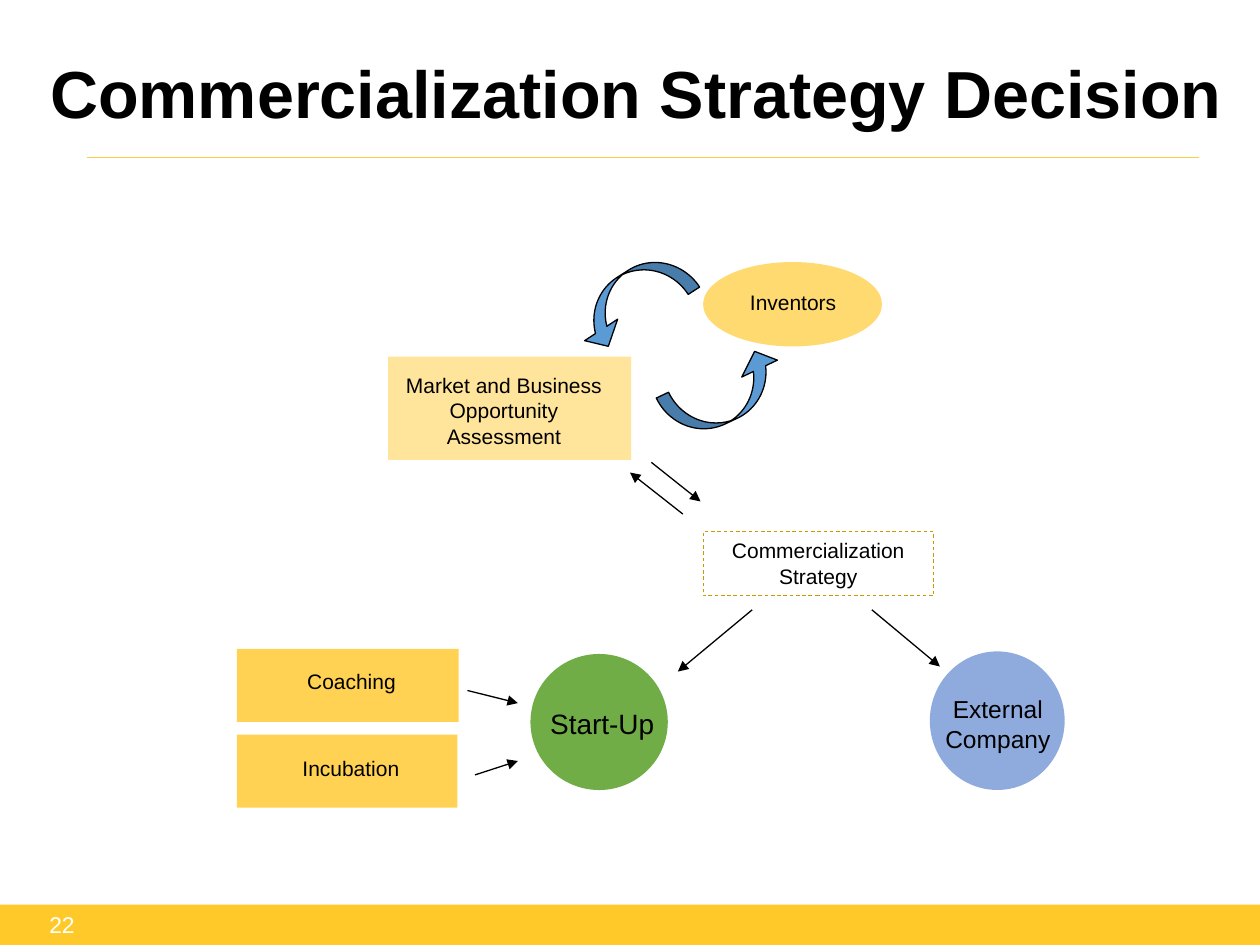
from lxml.etree import SubElement
from pptx import Presentation
from pptx.dml.color import RGBColor
from pptx.enum.dml import MSO_LINE
from pptx.enum.shapes import MSO_CONNECTOR, MSO_SHAPE as Kind
from pptx.enum.text import MSO_ANCHOR, PP_ALIGN as Align
from pptx.oxml.ns import qn
from pptx.util import Inches, Pt

hue = RGBColor.from_string
UNIT = Inches(0.1)  # the slide is a grid of 100 columns by 75 rows

deck = Presentation()
deck.slide_width, deck.slide_height = 100 * UNIT, 75 * UNIT
slide = deck.slides.add_slide(deck.slide_layouts[6])
shapes = slide.shapes


def draw(kind, box, fill=None):
    shape = shapes.add_shape(kind, *[int(v * UNIT) for v in box])
    shape.shadow.inherit = False
    shape.line.fill.background()
    if fill:
        shape.fill.solid()
        shape.fill.fore_color.rgb = hue(fill)
    else:
        shape.fill.background()
    return shape


def write(text, box, size, color="000000", align=Align.CENTER, bold=False):
    area = shapes.add_textbox(*[int(v * UNIT) for v in box])
    frame = area.text_frame
    frame.word_wrap = True
    para = frame.paragraphs[0]
    para.text = text
    para.alignment = align
    font = para.font
    font.name, font.size, font.bold = "Arial", Pt(size), bold
    font.color.rgb = hue(color)
    return area


# Footer band with page number
draw(Kind.RECTANGLE, (0, 71.8, 100, 3.2), "FFCA29")
page = write("22", (0, 71.8, 6.9, 3.1), 13, "FFFFFF", Align.RIGHT)
page.text_frame.vertical_anchor = MSO_ANCHOR.MIDDLE

# Title
write("Commercialization Strategy Decision", (3, 3.6, 97.4, 7.4), 38,
      align=Align.LEFT, bold=True)

# Nodes: kind, box, fill, text, text box, size
nodes = [
    (Kind.RECTANGLE, (30.8, 28.3, 19.3, 8.2), "FFE59B",
     "Market and Business Opportunity Assessment", (30, 29.1, 20, 7), 12),
    (Kind.OVAL, (55.8, 20.8, 14.2, 6.7), "FFDA71",
     "Inventors", (57.5, 22.5, 10.9, 3), 12),
    (Kind.OVAL, (42.1, 51.9, 10.9, 10.8), "70AD47",
     "Start-Up", (41, 55.6, 13.6, 3.7), 16),
    (Kind.OVAL, (73.8, 51.7, 10.7, 11), "8FAADC",
     "External\nCompany", (73.4, 54.6, 11.6, 5.7), 14),
    (Kind.RECTANGLE, (18.8, 51.5, 17.6, 5.8), "FFD253",
     "Coaching", (19.9, 52.6, 16, 3), 12),
    (Kind.RECTANGLE, (18.8, 58.3, 17.5, 5.8), "FFD253",
     "Incubation", (19.9, 59.5, 15.9, 3), 12),
]
for kind, box, fill, text, area, size in nodes:
    draw(kind, box, fill)
    write(text, area, size)

# Dashed strategy box
spot = (55.8, 42.2, 18.3, 5.1)
dashed = draw(Kind.RECTANGLE, spot)
dashed.line.color.rgb = hue("CC9900")
dashed.line.width = Pt(0.5)
dashed.line.dash_style = MSO_LINE.DASH
write("Commercialization Strategy", spot, 12)

# Curved arrows between inventors and assessment
for left, top, turn in [(48, 18.7, 57), (55.5, 26.2, 244.6)]:
    curve = draw(Kind.CURVED_RIGHT_ARROW, (left, top, 4.2, 10.2), "5B9BD5")
    curve.rotation = turn
    curve.line.color.rgb = hue("000000")
    curve.line.width = Pt(0.75)
    for i, value in enumerate((0.255, 0.745, 0.333)):
        curve.adjustments[i] = value

# Title rule and straight arrows: ends, colour, width, arrowhead
lines = [((6.9, 12.5, 95.2, 12.5), "FFCD3F", 1, False)]
lines += [(ends, "000000", 0.75, True) for ends in [
    (54.2, 40.8, 50, 37.5),
    (51.7, 36.7, 55.6, 39.8),
    (69.2, 48.4, 74.6, 52.9),
    (59.7, 48.4, 53.8, 53.3),
    (37.7, 61.5, 41.1, 60.4),
    (37.1, 54.8, 41.1, 55.8),
]]
for ends, color, width, head in lines:
    line = shapes.add_connector(MSO_CONNECTOR.STRAIGHT,
                                *[int(v * UNIT) for v in ends])
    line.line.color.rgb = hue(color)
    line.line.width = Pt(width)
    if head:
        SubElement(line.line._get_or_add_ln(), qn("a:tailEnd"), type="triangle")
    SubElement(line._element.spPr, qn("a:effectLst"))

deck.save("out.pptx")
